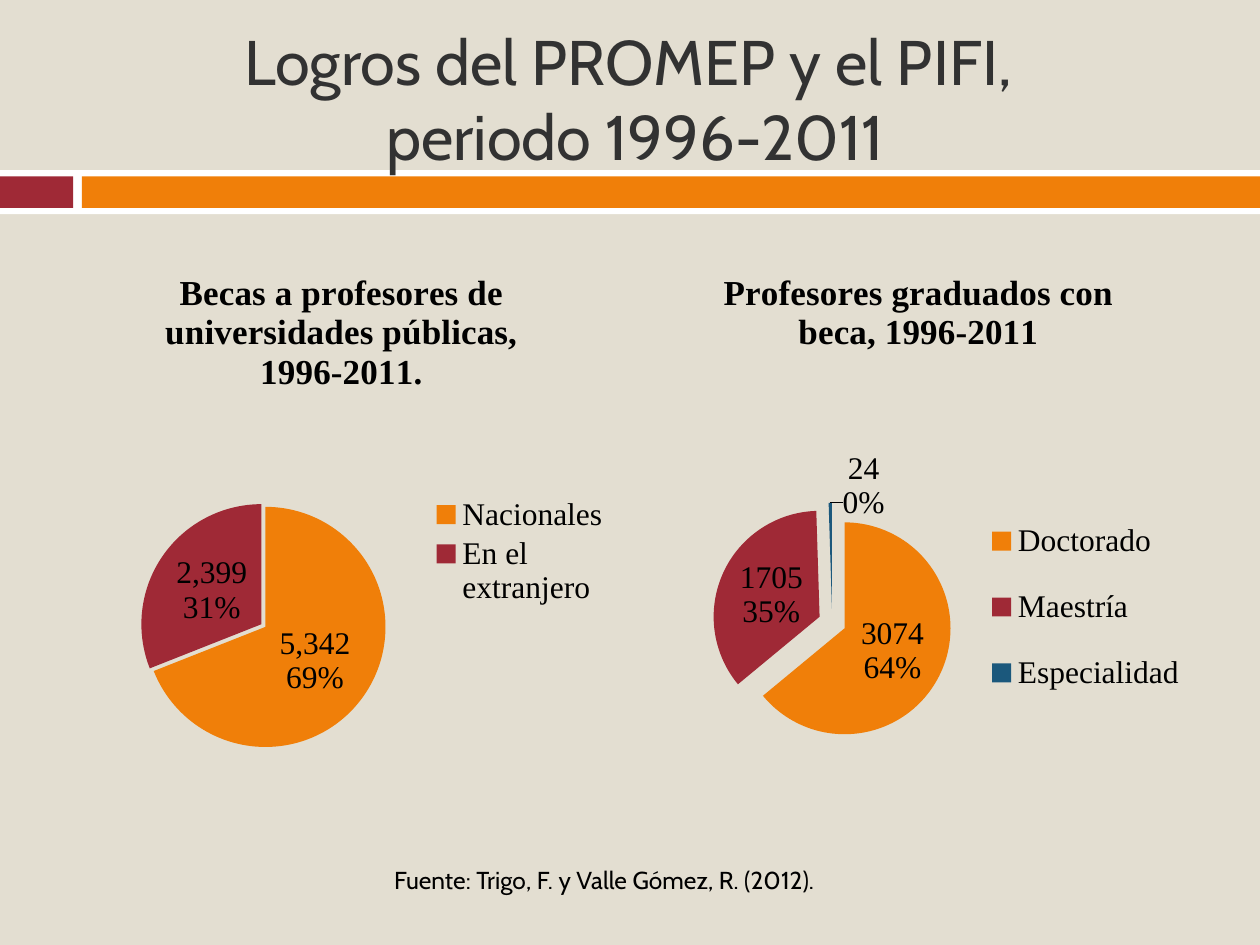
import pptx
import pptx.chart.data
import pptx.dml.color
import pptx.enum.chart
import pptx.enum.shapes
import pptx.enum.text
import pptx.oxml
import pptx.oxml.ns
import pptx.util
from dataclasses import dataclass

Inches = pptx.util.Inches


@dataclass(frozen=True)
class Theme:
    background: str = "E3DED1"
    white: str = "FFFFFF"
    orange: str = "F07F09"
    red: str = "9F2936"
    blue: str = "1B587C"
    heading: str = "323232"
    text: str = "000000"
    sans: str = "Cabin"
    serif: str = "Times New Roman"
    title_size: int = 36
    chart_title_size: int = 20
    chart_size: int = 18
    source_size: int = 14


def apply(target, values):
    for name, value in values.items():
        setattr(target, name, value)


def chart_element(tag, value=None):
    content = "" if value is None else f' val="{value}"'
    return pptx.oxml.parse_xml(f'<c:{tag} {pptx.oxml.ns.nsdecls("c")}{content}/>')


def manual_layout(values):
    layout = chart_element("layout")
    manual = chart_element("manualLayout")
    layout.append(manual)
    for tag, value in values.items():
        manual.append(chart_element(tag, value))
    return layout


def frame_layout(left, top, width, height, inner=False):
    target = {"layoutTarget": "inner"} if inner else {}
    return manual_layout({**target, "xMode": "edge", "yMode": "edge",
                          "x": left, "y": top, "w": width, "h": height})


class SlideBuilder:
    def __init__(self, slide, theme):
        self.slide = slide
        self.theme = theme
        fill = slide.background.fill
        fill.solid()
        fill.fore_color.rgb = self.color(theme.background)

    def color(self, value):
        return pptx.dml.color.RGBColor.from_string(value)

    def style_font(self, font, size, face, color, bold=False):
        apply(font, {"size": pptx.util.Pt(size), "name": face, "bold": bold})
        font.color.rgb = self.color(color)

    def style_chart_font(self, font):
        self.style_font(font, self.theme.chart_size, self.theme.serif, self.theme.text)

    def rectangle(self, left, top, width, height, color):
        shape = self.slide.shapes.add_shape(
            pptx.enum.shapes.MSO_SHAPE.RECTANGLE,
            Inches(left), Inches(top), Inches(width), Inches(height))
        shape.shadow.inherit = False
        shape.fill.solid()
        shape.fill.fore_color.rgb = self.color(color)
        shape.line.fill.background()

    def text(self, left, top, width, height, content, size, color, frame_format, align):
        box = self.slide.shapes.add_textbox(
            Inches(left), Inches(top), Inches(width), Inches(height))
        apply(box.text_frame, {"word_wrap": True, **frame_format})
        para = box.text_frame.paragraphs[0]
        apply(para, {"text": content, "alignment": align})
        for span in para.runs:
            self.style_font(span.font, size, self.theme.sans, color)

    def pie(self, left, title, slices, explosion, plot_area, legend_area, label_texts=()):
        data = pptx.chart.data.CategoryChartData()
        data.categories = [name for name, value, color in slices]
        data.add_series("Series 1", [value for name, value, color in slices])
        chart = self.slide.shapes.add_chart(
            pptx.enum.chart.XL_CHART_TYPE.PIE,
            Inches(left), Inches(1.94), Inches(4.42), Inches(4.92), data).chart
        self.style_font(chart.font, 10, self.theme.sans, self.theme.text)
        apply(chart, {"has_title": True, "has_legend": True})
        chart.chart_title.include_in_layout = False
        chart.chart_title.text_frame.text = title
        self.style_font(chart.chart_title.text_frame.paragraphs[0].runs[0].font,
                        self.theme.chart_title_size, self.theme.serif,
                        self.theme.text, bold=True)

        apply(chart.legend, {"position": pptx.enum.chart.XL_LEGEND_POSITION.RIGHT,
                             "include_in_layout": False})
        self.style_chart_font(chart.legend.font)
        root = chart.element
        for layout in root.xpath(".//c:plotArea/c:layout | .//c:legend/c:layout"):
            layout.getparent().remove(layout)
        root.xpath(".//c:plotArea")[0].insert(0, frame_layout(*plot_area, inner=True))
        root.xpath(".//c:legendPos")[0].addnext(frame_layout(*legend_area))
        root.xpath(".//c:ser/c:tx")[0].addnext(chart_element("explosion", explosion))

        plot = chart.plots[0]
        apply(plot, {"vary_by_categories": True, "has_data_labels": True})
        series = plot.series[0]
        labels = series.data_labels
        apply(labels, {"show_value": True, "show_percentage": True,
                       "position": pptx.enum.chart.XL_LABEL_POSITION.CENTER})
        self.style_chart_font(labels.font)
        for index, (name, value, color) in enumerate(slices):
            point = series.points[index]
            point.format.fill.solid()
            point.format.fill.fore_color.rgb = self.color(color)
            point.format.line.fill.background()
        for index, label_text in enumerate(label_texts):
            label = series.points[index].data_label
            label.text_frame.text = label_text
            label.position = pptx.enum.chart.XL_LABEL_POSITION.CENTER
            for para in label.text_frame.paragraphs:
                self.style_chart_font(para.runs[0].font)
        self.separate_lines(root)
        return chart

    def separate_lines(self, root):
        for bubble in root.xpath(".//c:ser//c:showBubbleSize"):
            separator = chart_element("separator")
            separator.text = "\n"
            bubble.addnext(separator)

    def move_label(self, chart, index, across, down):
        label = chart.plots[0].series[0].points[index].data_label
        label.position = pptx.enum.chart.XL_LABEL_POSITION.OUTSIDE_END
        self.style_chart_font(label.font)
        element = chart.element.xpath(f'.//c:dLbl[c:idx/@val="{index}"]')[0]
        element.xpath("c:idx")[0].addnext(manual_layout({"x": across, "y": down}))
        element.xpath("c:showPercent")[0].set("val", "1")
        self.separate_lines(element.getparent().getparent().getparent()
                            if not element.xpath("c:separator") and False else element)
        bubble = element.xpath("c:showBubbleSize")[0]
        if not element.xpath("c:separator"):
            separator = chart_element("separator")
            separator.text = "\n"
            bubble.addnext(separator)


def main():
    deck = pptx.Presentation()
    apply(deck, {"slide_width": Inches(10), "slide_height": Inches(7.5)})
    theme = Theme()
    page = SlideBuilder(deck.slides.add_slide(deck.slide_layouts[6]), theme)

    page.rectangle(0, 1.35, 10, 0.35, theme.white)
    page.rectangle(0, 1.4, 0.58, 0.25, theme.red)
    page.rectangle(0.65, 1.4, 9.35, 0.25, theme.orange)
    page.text(0.58, 0.3, 8.92, 0.95, "Logros del PROMEP y el PIFI, \vperiodo 1996-2011",
              theme.title_size, theme.heading,
              {"vertical_anchor": pptx.enum.text.MSO_ANCHOR.MIDDLE},
              pptx.enum.text.PP_ALIGN.CENTER)

    page.pie(0.5, "Becas a profesores de universidades públicas, 1996-2011.",
             [("Nacionales", 5342, theme.orange), ("En el extranjero", 2399, theme.red)],
             2, (0.14, 0.39, 0.44, 0.45), (0.65, 0.4, 0.34, 0.19),
             ("5,342\n69%", "2,399\n31%"))
    graduates = page.pie(
        5.08, "Profesores graduados con beca, 1996-2011",
        [("Doctorado", 3074, theme.orange), ("Maestría", 1705, theme.red),
         ("Especialidad", 24, theme.blue)],
        13, (0.13, 0.39, 0.43, 0.44), (0.61, 0.4, 0.38, 0.37))
    page.move_label(graduates, 2, 0.06, 0.04)

    page.text(3.03, 6.82, 4.72, 0.34, "Fuente: Trigo, F. y Valle Gómez, R. (2012).",
              theme.source_size, theme.text,
              {"auto_size": pptx.enum.text.MSO_AUTO_SIZE.SHAPE_TO_FIT_TEXT},
              pptx.enum.text.PP_ALIGN.LEFT)
    deck.save("out.pptx")


if __name__ == "__main__":
    main()
